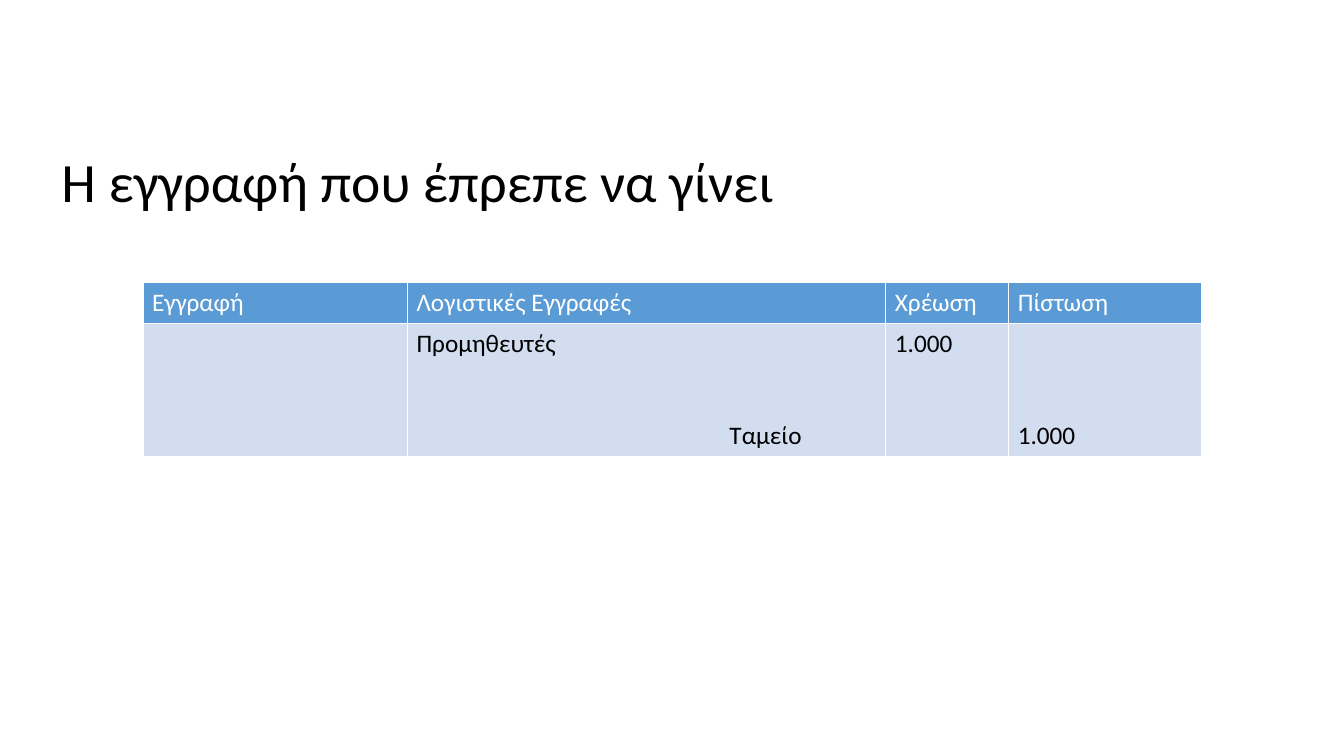
"""Builds a slide with the accounting entry that should have been made."""
from lxml import etree
from pptx import Presentation
from pptx.dml.color import RGBColor
from pptx.enum import text
from pptx.oxml import ns
from pptx.util import Pt

THEME = {
    "font": "Calibri",
    "title_size": Pt(39.6),
    "entry_size": Pt(18),
    "ink": RGBColor.from_string("000000"),
    "paper": RGBColor.from_string("FFFFFF"),
    "header": RGBColor.from_string("5B9BD5"),
    "body": RGBColor.from_string("D2DEEF"),
}


def apply(target, values):
    for name, value in values.items():
        setattr(target, name, value)


def write(paragraph, wording, size, color):
    run = paragraph.add_run()
    run.text = wording
    apply(run.font, {"name": THEME["font"], "size": size, "bold": False})
    run.font.color.rgb = color


deck = Presentation()
apply(deck, {"slide_width": Pt(960), "slide_height": Pt(540)})
slide = deck.slides.add_slide(deck.slide_layouts[5])

heading = slide.shapes.title
apply(heading, {"left": Pt(36.7), "top": Pt(15), "width": Pt(884), "height": Pt(146)})
apply(heading.text_frame, {
    "word_wrap": True,
    "auto_size": text.MSO_AUTO_SIZE.NONE,
    "vertical_anchor": text.MSO_ANCHOR.BOTTOM,
    "margin_bottom": Pt(8),
})
apply(heading.text_frame.paragraphs[0], {"alignment": text.PP_ALIGN.LEFT, "line_spacing": 0.9})
write(heading.text_frame.paragraphs[0], "Η εγγραφή που έπρεπε να γίνει", THEME["title_size"], THEME["ink"])

journal_rows = [
    ["Εγγραφή", "Λογιστικές Εγγραφές", "Χρέωση", "Πίστωση"],
    ["", "Προμηθευτές", "1.000", "1.000"],
]
column_widths = [188.9, 341.7, 87.8, 137.6]
row_heights = [29, 94.8]
journal = slide.shapes.add_table(
    len(journal_rows), len(column_widths), Pt(102.2), Pt(201.6),
    Pt(sum(column_widths)), Pt(sum(row_heights))).table

for column, width in zip(journal.columns, column_widths):
    column.width = Pt(width)

row_colors = [(THEME["header"], THEME["paper"]), (THEME["body"], THEME["ink"])]
for r, (entries, height, (fill, ink)) in enumerate(zip(journal_rows, row_heights, row_colors)):
    journal.rows[r].height = Pt(height)
    for c, entry in enumerate(entries):
        cell = journal.cell(r, c)
        apply(cell, {"margin_left": Pt(6.5), "margin_right": Pt(6.5),
                     "margin_top": Pt(3.6), "margin_bottom": Pt(3.6)})
        properties = cell._tc.get_or_add_tcPr()
        for side in ("a:lnL", "a:lnR", "a:lnT", "a:lnB"):
            border = etree.SubElement(properties, ns.qn(side), w=str(Pt(1)))
            paint = etree.SubElement(border, ns.qn("a:solidFill"))
            etree.SubElement(paint, ns.qn("a:srgbClr"), val=str(THEME["paper"]))
        cell.fill.solid()
        cell.fill.fore_color.rgb = fill
        if entry:
            write(cell.text_frame.paragraphs[0], entry, THEME["entry_size"], ink)

cash = journal.cell(1, 1).text_frame.add_paragraph()
cash.space_before = Pt(44)
cash._p.get_or_add_pPr().set("marL", str(Pt(223.5)))
write(cash, "Ταμείο", THEME["entry_size"], THEME["ink"])
journal.cell(1, 3).vertical_anchor = text.MSO_ANCHOR.BOTTOM

deck.save("out.pptx")
